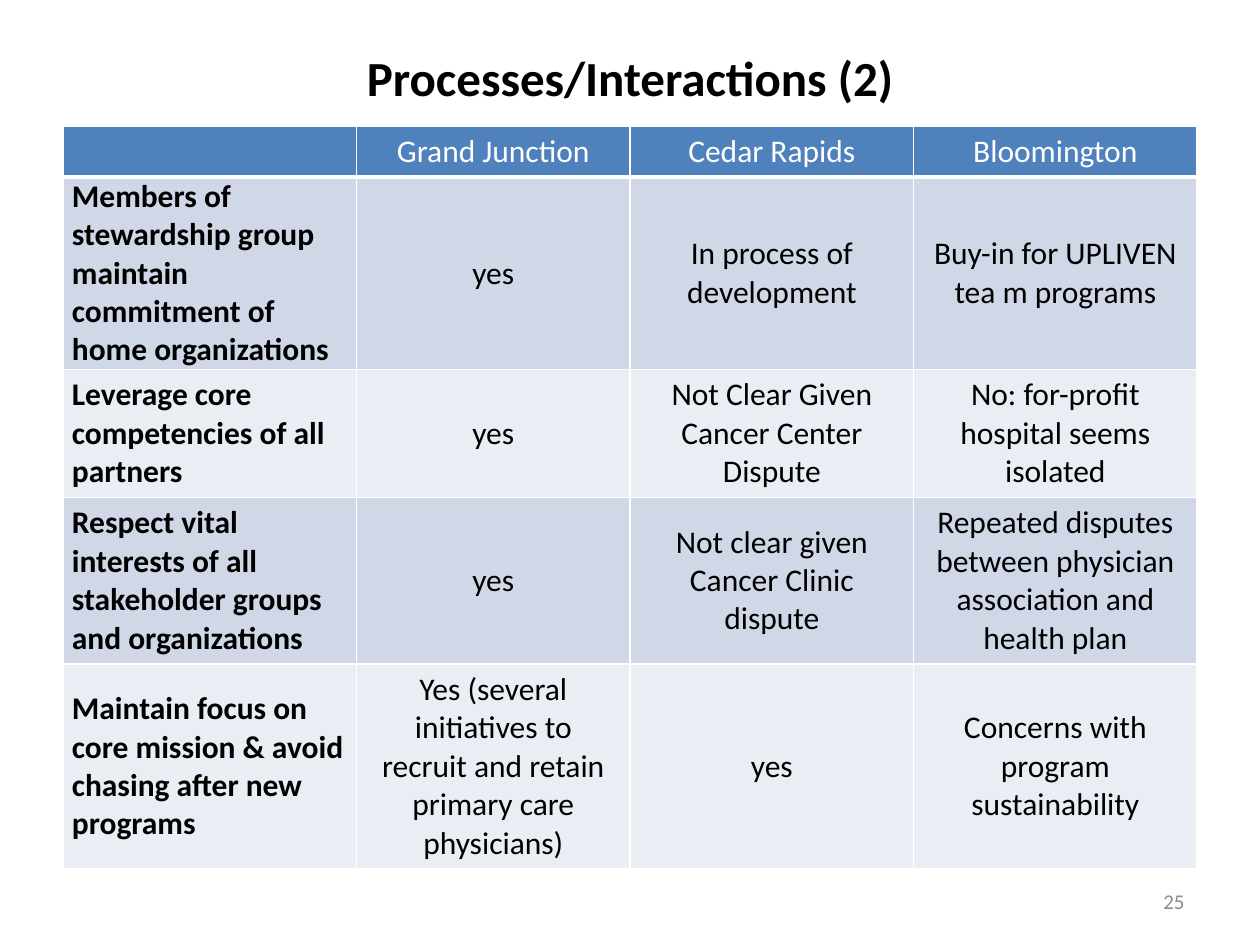
from lxml.etree import SubElement
from pptx import Presentation
from pptx.dml.color import RGBColor
from pptx.enum.text import MSO_ANCHOR, PP_ALIGN
from pptx.oxml.ns import qn
from pptx.util import Cm, Pt

BLACK = RGBColor(0x00, 0x00, 0x00)
WHITE = RGBColor(0xFF, 0xFF, 0xFF)
GREY = RGBColor(0x8C, 0x8C, 0x8C)
HEADER_BLUE = RGBColor(0x4F, 0x81, 0xBD)
BAND_DARK = RGBColor(0xD0, 0xD8, 0xE8)
BAND_LIGHT = RGBColor(0xE9, 0xED, 0xF4)

COLUMN_WIDTHS = [5.92, 5.51, 5.72, 5.71]
ROW_HEIGHTS = [1.03, 3.87, 2.58, 3.36, 4.13]
ROWS = [
    ["", "Grand Junction", "Cedar Rapids", "Bloomington"],
    ["Members of stewardship group maintain commitment of home organizations",
     "yes", "In process of development", "Buy-in for UPLIVEN tea m programs"],
    ["Leverage core competencies of all partners", "yes",
     "Not Clear Given Cancer Center Dispute",
     "No: for-profit hospital seems isolated"],
    ["Respect vital interests of all stakeholder groups and organizations",
     "yes", "Not clear given Cancer Clinic dispute",
     "Repeated disputes between physician association and health plan"],
    ["Maintain focus on core mission & avoid chasing after new programs",
     "Yes (several initiatives to recruit and retain primary care physicians)",
     "yes", "Concerns with program sustainability"],
]


def write_text(frame, text, size, color, bold=False, align=PP_ALIGN.CENTER):
    para = frame.paragraphs[0]
    para.alignment = align
    span = para.add_run()
    span.text = text
    span.font.name = "Calibri"
    span.font.size = Pt(size)
    span.font.bold = bold
    span.font.color.rgb = color


def add_title(page, text):
    title = page.shapes.title
    title.left, title.top = Cm(1.27), Cm(0.76)
    title.width, title.height = Cm(22.86), Cm(1.57)
    title.text_frame.vertical_anchor = MSO_ANCHOR.MIDDLE
    write_text(title.text_frame, text, 28, BLACK, bold=True)


def add_borders(cell, widths):
    properties = cell._tc.get_or_add_tcPr()
    for side, width in widths.items():
        line = SubElement(properties, qn(f"a:ln{side}"), w=str(Pt(width)))
        fill = SubElement(line, qn("a:solidFill"))
        SubElement(fill, qn("a:srgbClr"), val=str(WHITE))


def format_cell(cell, text, row, column):
    is_header = row == 0
    is_label = column == 0 and not is_header
    add_borders(cell, {"L": 1, "R": 1, "T": 1, "B": 3 if is_header else 1})
    cell.fill.solid()
    band = BAND_DARK if row % 2 else BAND_LIGHT
    cell.fill.fore_color.rgb = HEADER_BLUE if is_header else band
    cell.vertical_anchor = MSO_ANCHOR.MIDDLE
    if is_label:
        cell.margin_left = cell.margin_right = Cm(0.18)
        cell.margin_top = cell.margin_bottom = Cm(0)
    if text:
        write_text(cell.text_frame, text, 18, WHITE if is_header else BLACK,
                   is_label, PP_ALIGN.LEFT if is_label else PP_ALIGN.CENTER)


def add_comparison_table(page):
    table = page.shapes.add_table(
        len(ROWS), len(COLUMN_WIDTHS), Cm(1.27), Cm(2.54),
        Cm(sum(COLUMN_WIDTHS)), Cm(sum(ROW_HEIGHTS))).table
    for column, width in zip(table.columns, COLUMN_WIDTHS):
        column.width = Cm(width)
    for table_row, height in zip(table.rows, ROW_HEIGHTS):
        table_row.height = Cm(height)
    for row, texts in enumerate(ROWS):
        for column, text in enumerate(texts):
            format_cell(table.cell(row, column), text, row, column)


def add_page_number(page, number):
    box = page.shapes.add_textbox(Cm(18.2), Cm(17.66), Cm(5.93), Cm(1.01))
    box.text_frame.word_wrap = True
    box.text_frame.vertical_anchor = MSO_ANCHOR.MIDDLE
    write_text(box.text_frame, number, 12, GREY, align=PP_ALIGN.RIGHT)


def main():
    deck = Presentation()
    deck.slide_width, deck.slide_height = Cm(25.4), Cm(19.05)
    page = deck.slides.add_slide(deck.slide_layouts.get_by_name("Title Only"))
    add_title(page, "Processes/Interactions (2)")
    add_comparison_table(page)
    add_page_number(page, "25")
    deck.save("out.pptx")


if __name__ == "__main__":
    main()
